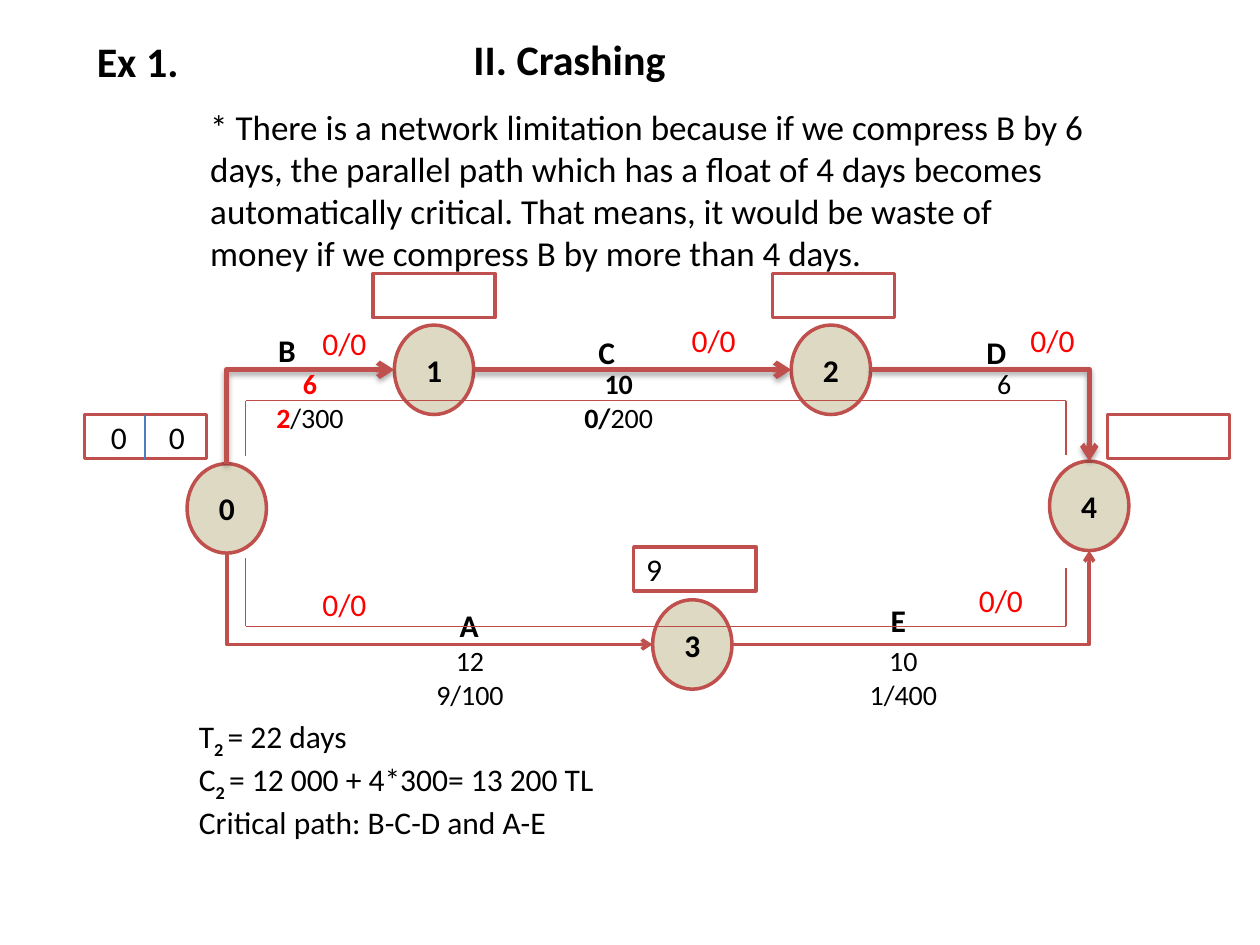
from dataclasses import dataclass

import pptx
import pptx.dml.color
import pptx.enum.shapes
import pptx.enum.text
import pptx.oxml
import pptx.oxml.ns
import pptx.util

SHAPE = pptx.enum.shapes.MSO_SHAPE
ALIGN = pptx.enum.text.PP_ALIGN
COLORS = {"ink": "000000", "red": "FF0000", "border": "C0504D", "node": "DDD9C3",
          "white": "FFFFFF", "loop": "BF4C48", "divider": "4B7EBC"}
FONT = "Calibri"
CELL = 0.1  # inches: the page is a grid of 100 columns by 75 rows
NODE_WIDTH, NODE_HEIGHT = 6.3, 7.1
BOX_WIDTH, BOX_HEIGHT = 9.7, 3.5
NAMESPACE = pptx.oxml.ns.nsdecls("a")
SHADOW = ('<a:outerShdw blurRad="40000" dist="23000" dir="5400000" rotWithShape="0">'
          '<a:srgbClr val="000000"><a:alpha val="35000"/></a:srgbClr></a:outerShdw>')


@dataclass
class Node:
    name: str
    column: float  # centre
    row: float

    def side(self, right: int = 0, down: int = 0) -> tuple:
        """Point on the outline: -1, 0 or 1 in each direction."""
        return self.column + right * NODE_WIDTH / 2, self.row + down * NODE_HEIGHT / 2


@dataclass
class Span:
    text: str
    bold: bool = False
    color: str = "ink"
    subscript: bool = False


@dataclass
class Activity:
    name: str
    name_at: tuple
    cost_at: tuple
    cost: list
    cost_width: float = 10.2


deck = pptx.Presentation()
deck.slide_width, deck.slide_height = pptx.util.Inches(10), pptx.util.Inches(7.5)
page = deck.slides.add_slide(deck.slide_layouts[6])


def grid(*cells: float) -> list:
    return [pptx.util.Inches(cell * CELL) for cell in cells]


def rgb(name: str) -> pptx.dml.color.RGBColor:
    return pptx.dml.color.RGBColor.from_string(COLORS[name])


def write(frame, text, size=18, bold=False, color="ink", align=ALIGN.LEFT) -> None:
    """Text is a string or a list of paragraphs, each a list of spans."""
    paragraphs = [[Span(text, bold, color)]] if isinstance(text, str) else text
    frame.word_wrap = True
    for index, spans in enumerate(paragraphs):
        para = frame.add_paragraph() if index else frame.paragraphs[0]
        para.alignment = align
        for span in spans:
            if span.text == "\n":
                para.add_line_break()
                continue
            run = para.add_run()
            run.text = span.text
            run.font.name, run.font.size = FONT, pptx.util.Pt(size)
            run.font.bold = span.bold
            run.font.color.rgb = rgb(span.color)
            if span.subscript:
                run.font._element.set("baseline", "-25000")


def add_text(left: float, top: float, width: float, height: float, text, **style) -> None:
    box = page.shapes.add_textbox(*grid(left, top, width, height))
    write(box.text_frame, text, **style)


def add_outline(kind, left, top, width, height, fill, text="", **style):
    shape = page.shapes.add_shape(kind, *grid(left, top, width, height))
    shape.shadow.inherit = False
    shape.fill.solid()
    shape.fill.fore_color.rgb = rgb(fill)
    shape.line.color.rgb = rgb("border")
    shape.line.width = pptx.util.Pt(2)
    shape.text_frame.vertical_anchor = pptx.enum.text.MSO_ANCHOR.MIDDLE
    if text:
        write(shape.text_frame, text, **style)
    return shape


def add_node(node: Node) -> None:
    add_outline(SHAPE.OVAL, *node.side(-1, 0)[:1], node.side(0, -1)[1], NODE_WIDTH,
                NODE_HEIGHT, "node", node.name, bold=True, align=ALIGN.CENTER)


def add_time_box(left: float, top: float, text: str = ""):
    return add_outline(SHAPE.RECTANGLE, left, top, BOX_WIDTH, BOX_HEIGHT, "white", text)


def add_line(start: tuple, end: tuple, color="border", weight=0.75, arrow="",
             bent=False, shadow=False) -> None:
    """Arrow is 'headEnd' (at start) or 'tailEnd'; bent lines run sideways first."""
    kinds = pptx.enum.shapes.MSO_CONNECTOR
    line = page.shapes.add_connector(kinds.ELBOW if bent else kinds.STRAIGHT,
                                     *grid(*start, *end))
    line.line.color.rgb = rgb(color)
    line.line.width = pptx.util.Pt(weight)
    properties = line._element.spPr
    if bent:
        properties.find(pptx.oxml.ns.qn("a:prstGeom")).set("prst", "bentConnector2")
    if arrow:
        line.line._get_or_add_ln().append(
            pptx.oxml.parse_xml(f'<a:{arrow} {NAMESPACE} type="arrow"/>'))
    properties.append(pptx.oxml.parse_xml(
        f'<a:effectLst {NAMESPACE}>{SHADOW if shadow else ""}</a:effectLst>'))


# Headings and explanation
add_text(36.6, 2.2, 29.6, 5, "II. Crashing", size=24, bold=True)
add_text(6.7, 2.3, 29.6, 5, "Ex 1.", size=24, bold=True)
add_text(15.7, 7.9, 71.8, 14.5,
         "* There is a network limitation because if we compress B by 6 days, the parallel "
         "path which has a float of 4 days becomes automatically critical. That means, it "
         "would be waste of money if we compress B by more than 4 days.", size=20)

# Network nodes
nodes = [Node("0", 18, 40.35), Node("1", 34.45, 29.35), Node("2", 65.95, 29.35),
         Node("3", 54.95, 51.15), Node("4", 86.45, 40.15)]
for node in nodes:
    add_node(node)
source, first, second, third, sink = nodes

# Activity arrows: the upper path is heavy, the lower path light
heavy = dict(weight=3, shadow=True)
light = dict(weight=2)
add_line(first.side(-1), source.side(down=-1), arrow="headEnd", bent=True, **heavy)
add_line(first.side(1), second.side(-1), arrow="tailEnd", **heavy)
add_line(second.side(1), sink.side(down=-1), arrow="tailEnd", bent=True, **heavy)
add_line(third.side(-1), source.side(down=1), arrow="headEnd", bent=True, **light)
add_line(third.side(1), sink.side(down=1), arrow="tailEnd", bent=True, **light)

# Activity names with duration and cost
activities = [
    Activity("B", (21.1, 25.8), (19.5, 28.6),
             [Span("6", True, "red"), Span("\n"), Span("2", True, "red"), Span("/300")]),
    Activity("C", (46.5, 25.9), (44, 28.6),
             [Span("10", True), Span("\n"), Span("0/", True), Span("200")]),
    Activity("D", (77.3, 25.9), (77.6, 28.6), [Span("6")], 4.2),
    Activity("A", (35.5, 47.6), (32.2, 50.6), [Span("12"), Span("\n"), Span("9/100")]),
    Activity("E", (69.7, 47.2), (66.6, 50.6), [Span("10"), Span("\n"), Span("1/400")]),
]
for activity in activities:
    add_text(*activity.name_at, 5.3, 4, activity.name, bold=True)
    add_text(*activity.cost_at, activity.cost_width, 6.4, [activity.cost],
             size=16, align=ALIGN.CENTER)

# Event time boxes
start_box = add_time_box(6.7, 32.9, "0\t0")
start_box.text_frame.margin_left = pptx.util.Inches(0.21)
start_box.text_frame.paragraphs[0]._p.get_or_add_pPr().append(pptx.oxml.parse_xml(
    f'<a:tabLst {NAMESPACE}><a:tab pos="{pptx.util.Inches(0.46)}" algn="l"/></a:tabLst>'))
add_line((11.5, 32.9), (11.5, 36.5), "divider")
for left, top, text in [(29.6, 21.7, ""), (61.3, 21.7, ""), (87.9, 32.9, ""),
                        (50.3, 43.4, "9")]:
    add_time_box(left, top, text)

# Thin loop inside the network: an upper and a lower bracket
loop_left, loop_right = 19.5, 84.6
for row, left_end, right_end in [(31.8, 36.2, 36.1), (49.7, 44.3, 45.1)]:
    add_line((loop_left, left_end), (loop_left, row), "loop")
    add_line((loop_left, row), (loop_right, row), "loop")
    add_line((loop_right, row), (loop_right, right_end), "loop")

# Floats
for left, top in [(24.6, 25.2), (53.9, 25), (80.8, 25), (76.7, 45.6), (24.6, 45.9)]:
    add_text(left, top, 5.8, 4, "0/0", color="red")

# Results
add_text(14.8, 56.4, 50.1, 10.1, [
    [Span("T"), Span("2 ", True, subscript=True), Span("= 22 days")],
    [Span("C"), Span("2 ", True, subscript=True), Span("= 12 000 + 4*300= 13 200 TL")],
    [Span("Critical path: B-C-D and A-E")],
])

deck.save("out.pptx")
